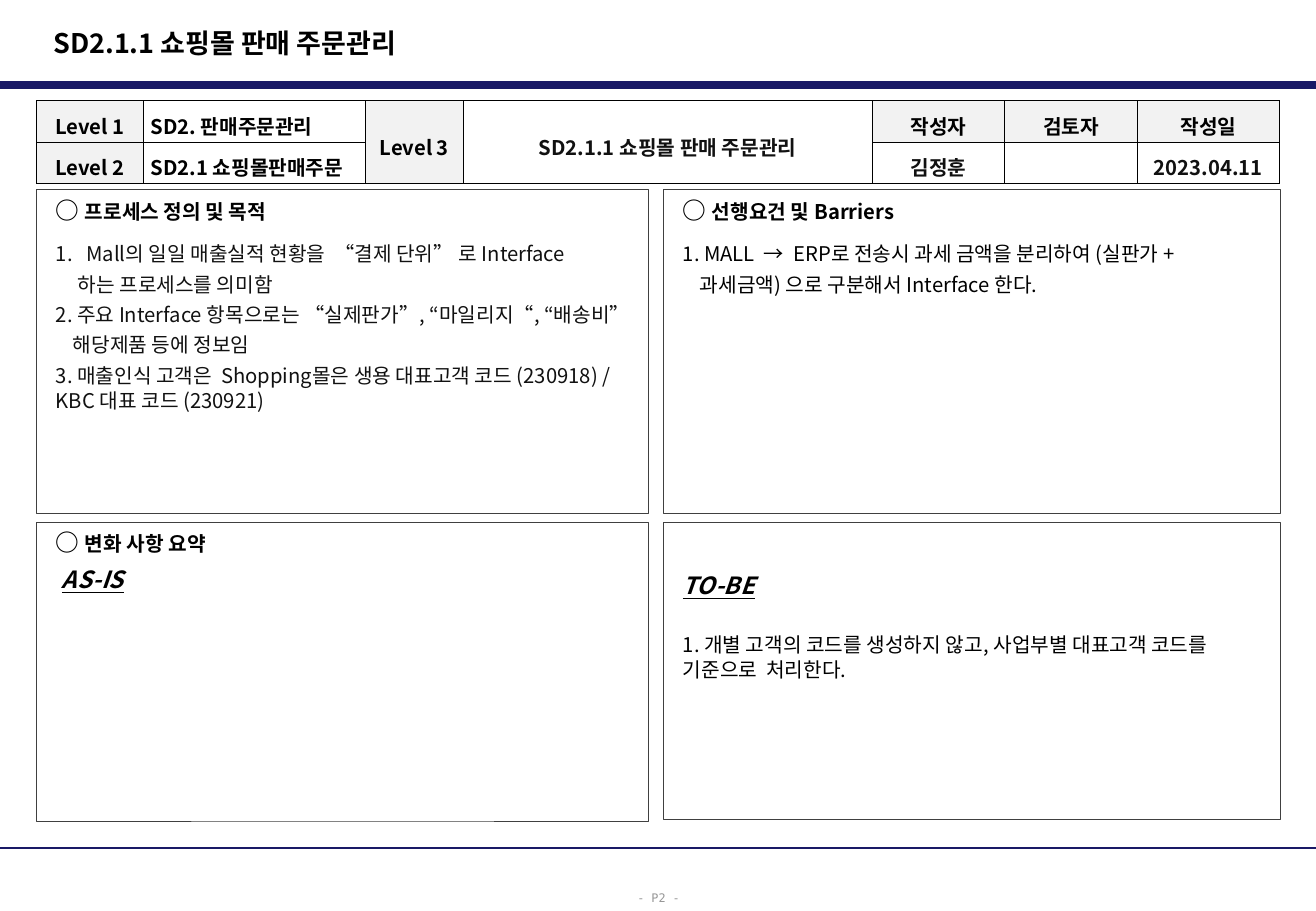
"""Builds the process definition slide for shopping mall sales orders."""
import pptx
import pptx.dml.color
import pptx.enum.shapes
import pptx.enum.text
import pptx.oxml
import pptx.oxml.ns
import pptx.util

Inches = pptx.util.Inches
Pt = pptx.util.Pt
RGBColor = pptx.dml.color.RGBColor
Align = pptx.enum.text.PP_ALIGN
Anchor = pptx.enum.text.MSO_ANCHOR
AutoSize = pptx.enum.text.MSO_AUTO_SIZE

NAVY = RGBColor(0x19, 0x19, 0x66)
BLACK = RGBColor(0, 0, 0)
INK = RGBColor(0x11, 0x11, 0x11)
OUTLINE = RGBColor(0x40, 0x40, 0x40)
GREY = RGBColor(0x96, 0x96, 0x96)
LABEL_FILL = RGBColor(0xF2, 0xF2, 0xF2)
SLIDE_WIDTH = 10.83


def element(tag, **attributes):
    """Make a drawing element with the given attributes."""
    node = pptx.oxml.parse_xml(f"<a:{tag} {pptx.oxml.ns.nsdecls('a')}/>")
    for key, value in attributes.items():
        node.set(key, str(value))
    return node


def write(paragraph, text, size=12, bold=False, italic=False, underline=False,
          color=BLACK, font="Noto Sans CJK KR", align=Align.LEFT, spacing=1.0,
          before=0, left=0, hanging=0, numbered=False):
    """Add one run of text and format its paragraph."""
    paragraph.alignment = align
    paragraph.line_spacing = spacing
    paragraph.space_before = Pt(before)
    properties = paragraph._p.get_or_add_pPr()
    properties.set("marL", str(Inches(left)))
    properties.set("indent", str(-Inches(hanging)))
    if numbered:
        properties.append(element("buAutoNum", type="arabicPeriod"))
    run = paragraph.add_run()
    run.text = text
    run.font.size = Pt(size)
    run.font.bold, run.font.italic, run.font.underline = bold, italic, underline
    run.font.color.rgb = color
    run.font.name = font
    run._r.get_or_add_rPr().append(element("ea", typeface=font))


class ProcessSlide:
    """Holds the slide and its style, and draws each kind of element."""

    def __init__(self, presentation):
        """Add a title-only slide."""
        self.slide = presentation.slides.add_slide(presentation.slide_layouts[5])
        self.shapes = self.slide.shapes

    def title(self, text):
        """Place and fill the title."""
        title = self.shapes.title
        title.left, title.top = Inches(0.34), Inches(0.16)
        title.width, title.height = Inches(7.11), Inches(0.38)
        title.text_frame.auto_size = AutoSize.NONE
        title.text_frame.vertical_anchor = Anchor.MIDDLE
        write(title.text_frame.paragraphs[0], text, size=16, bold=True)

    def rule(self, top, weight):
        """Draw a line across the slide."""
        line = self.shapes.add_connector(
            pptx.enum.shapes.MSO_CONNECTOR.STRAIGHT,
            0, Inches(top), Inches(SLIDE_WIDTH), Inches(top))
        line.line.color.rgb = NAVY
        line.line.width = Pt(weight)
        line._element.spPr.append(element("effectLst"))

    def page_number(self, text):
        """Write the page number."""
        box = self.shapes.add_textbox(Inches(5.14), Inches(7.25), Inches(0.56), Inches(0.25))
        box.text_frame.word_wrap = False
        write(box.text_frame.paragraphs[0], text, size=7, color=GREY,
              font="DejaVu Sans Mono", align=Align.CENTER, spacing=1.3)

    def panel(self, left, top, width, height, heading, lines, inset=0.05):
        """Draw an outlined panel with a heading and formatted lines."""
        panel = self.shapes.add_shape(
            pptx.enum.shapes.MSO_SHAPE.RECTANGLE,
            Inches(left), Inches(top), Inches(width), Inches(height))
        panel.shadow.inherit = False
        panel.fill.background()
        panel.line.color.rgb = OUTLINE
        panel.line.width = Pt(0.5)
        frame = panel.text_frame
        frame.word_wrap = True
        frame.vertical_anchor = Anchor.TOP
        frame.margin_left, frame.margin_top = Inches(0.16), Inches(inset)
        paragraph = frame.paragraphs[0]
        if heading:
            write(paragraph, "○ ", size=14, bold=True)
            write(paragraph, heading, bold=True)
        for number, (text, style) in enumerate(lines):
            if heading or number:
                paragraph = frame.add_paragraph()
            write(paragraph, text, **style)

    def table(self, rows, widths, labels, left_aligned, merged):
        """Draw the process header table."""
        table = self.shapes.add_table(
            len(rows), len(widths), Inches(0.3), Inches(0.83),
            Inches(sum(widths)), Inches(0.68)).table
        table.first_row = table.horz_banding = False
        for column, width in zip(table.columns, widths):
            column.width = Inches(width)
        for column in merged:
            table.cell(0, column).merge(table.cell(1, column))
        for r, row in enumerate(rows):
            table.rows[r].height = Inches(0.34)
            for c, text in enumerate(row):
                self.cell(table.cell(r, c), text, (r, c) in labels,
                          Align.LEFT if c in left_aligned else Align.CENTER)

    def cell(self, cell, text, is_label, align):
        """Fill and border one table cell."""
        cell.margin_left = cell.margin_right = Inches(0.06)
        cell.margin_top = cell.margin_bottom = Inches(0.01)
        cell.vertical_anchor = Anchor.MIDDLE
        properties = cell._tc.get_or_add_tcPr()
        for side in ("lnL", "lnR", "lnT", "lnB"):
            border = element(side, w=Pt(0.5))
            fill = element("solidFill")
            fill.append(element("srgbClr", val=BLACK))
            border.append(fill)
            properties.append(border)
        if is_label:
            cell.fill.solid()
            cell.fill.fore_color.rgb = LABEL_FILL
        else:
            cell.fill.background()
        write(cell.text_frame.paragraphs[0], text, bold=True, align=align, spacing=1.3,
              color=BLACK if is_label or align == Align.LEFT else INK)


def main():
    """Build and save the slide."""
    presentation = pptx.Presentation()
    presentation.slide_width = Inches(SLIDE_WIDTH)
    presentation.slide_height = Inches(7.5)
    page = ProcessSlide(presentation)
    page.rule(0.7, 4.5)
    page.rule(6.98, 1.5)
    page.page_number("- P2 -")
    page.title("SD2.1.1 쇼핑몰 판매 주문관리")

    body = dict(spacing=1.04, before=3)
    first = dict(body, before=10)
    ink = dict(body, color=INK)
    mark = dict(size=14, bold=True, italic=True, underline=True)
    left, right, upper, lower = 0.3, 5.46, 1.56, 4.3
    page.panel(left, upper, 5.04, 2.67, "프로세스 정의 및 목적", [
        ("Mall의 일일 매출실적 현황을  “결제 단위” 로 Interface",
         dict(first, color=INK, left=0.25, hanging=0.25, numbered=True)),
        ("하는 프로세스를 의미함", dict(ink, left=0.18)),
        ("2. 주요 Interface 항목으로는 “실제판가”, “마일리지“, “배송비”", ink),
        ("해당제품 등에 정보임", dict(ink, left=0.14)),
        ("3. 매출인식 고객은  Shopping몰은 생용 대표고객 코드 (230918) / KBC 대표 코드 (230921)", ink),
    ])
    page.panel(right, upper, 5.08, 2.67, "선행요건 및 Barriers", [
        ("1. MALL  →  ERP로 전송시 과세 금액을 분리하여 (실판가 +", first),
        ("과세금액) 으로 구분해서 Interface 한다.", dict(body, left=0.14)),
    ])
    page.panel(left, lower, 5.04, 2.46, "변화 사항 요약", [
        ("AS-IS", dict(mark, before=5, left=0.05)),
    ])
    page.panel(right, lower, 5.08, 2.45, None, [
        ("TO-BE", mark),
        ("1. 개별 고객의 코드를 생성하지 않고, 사업부별 대표고객 코드를 기준으로  처리한다.",
         dict(body, before=19)),
    ], inset=0.4)

    page.table(
        [["Level 1", "SD2. 판매주문관리", "Level 3", "SD2.1.1 쇼핑몰 판매 주문관리",
          "작성자", "검토자", "작성일"],
         ["Level 2", "SD2.1 쇼핑몰판매주문", "", "", "김정훈", "", "2023.04.11"]],
        widths=[0.88, 1.83, 0.8, 3.37, 1.09, 1.09, 1.17],
        labels={(0, 0), (1, 0), (0, 2), (1, 2), (0, 4), (0, 5), (0, 6)},
        left_aligned={1}, merged=(2, 3))
    presentation.save("out.pptx")


if __name__ == "__main__":
    main()
